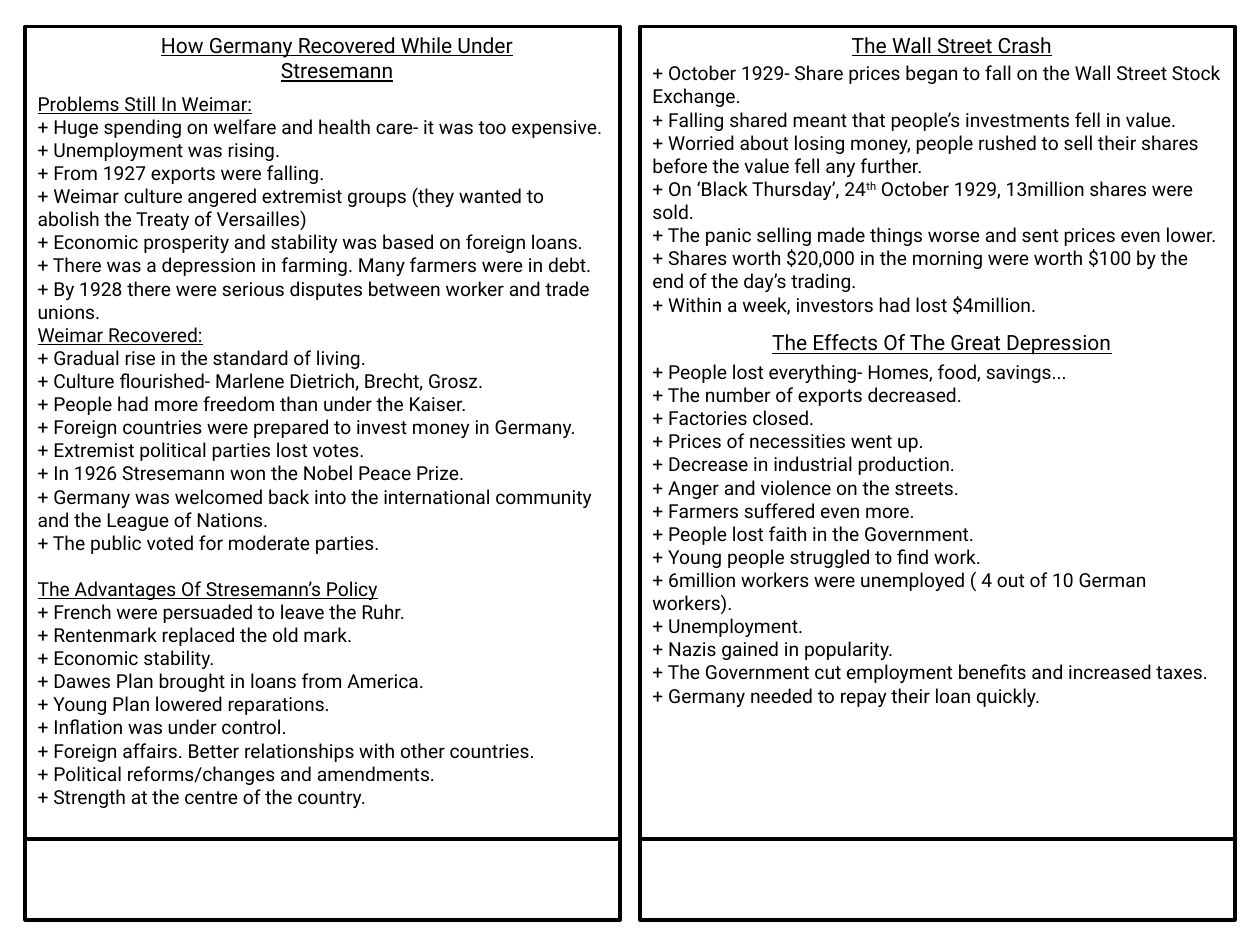
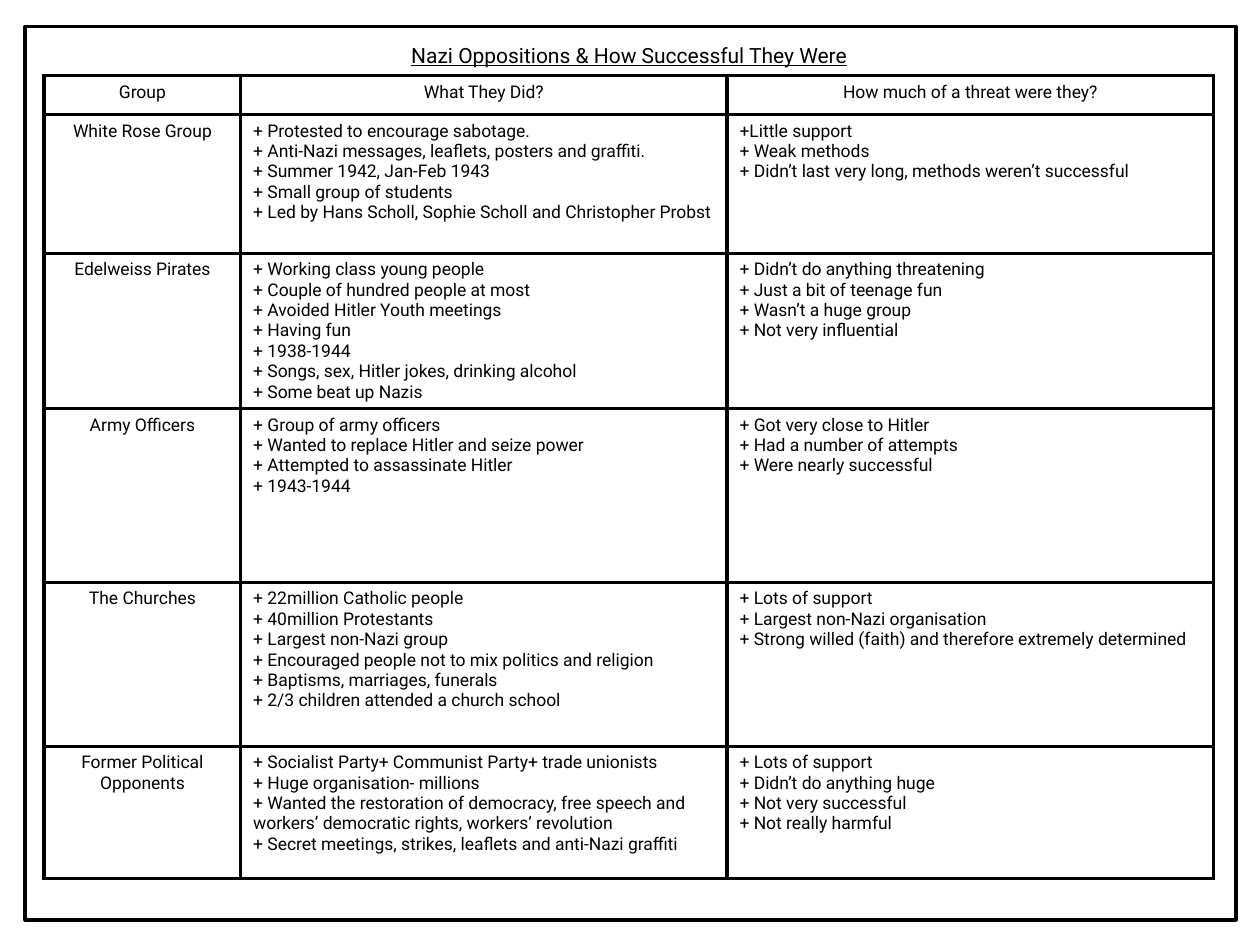
from dataclasses import dataclass

from lxml import etree
from pptx import Presentation
from pptx.dml.color import RGBColor
from pptx.enum.shapes import MSO_CONNECTOR, MSO_SHAPE
from pptx.enum.text import MSO_ANCHOR, MSO_AUTO_SIZE, PP_ALIGN
from pptx.oxml.ns import qn
from pptx.util import Inches, Pt

RECT = MSO_SHAPE.RECTANGLE
LINE = MSO_CONNECTOR.STRAIGHT
TOP = MSO_ANCHOR.TOP
GROW = MSO_AUTO_SIZE.SHAPE_TO_FIT_TEXT
LEFT, MID = PP_ALIGN.LEFT, PP_ALIGN.CENTER


@dataclass(frozen=True)
class Theme:
    font: str = "Roboto"
    ink: RGBColor = RGBColor(0, 0, 0)
    paper: RGBColor = RGBColor(255, 255, 255)
    head: int = 12
    body: int = 11
    cell: int = 10
    gap: int = 13
    frame: float = 2
    rule: float = 2.25


# Page grid, in inches
EDGE, TOP_Y, HIGH = 0.2, 0.21, 7.09
CARD, STEP, FOOT = 4.72, 4.88, 6.66
HEAD_W = 3.07

# Wording: "#" marks a subheading, "##" one with a gap above,
# and "^" encloses superscript text
WEIMAR = [
    "#Problems Still In Weimar:",
    "+ Huge spending on welfare and health care- it was too expensive.",
    "+ Unemployment was rising.",
    "+ From 1927 exports were falling.",
    "+ Weimar culture angered extremist groups (they wanted to abolish the Treaty of Versailles)",
    "+ Economic prosperity and stability was based on foreign loans.",
    "+ There was a depression in farming. Many farmers were in debt.",
    "+ By 1928 there were serious disputes between worker and trade unions.",
    "#Weimar Recovered:",
    "+ Gradual rise in the standard of living.",
    "+ Culture flourished- Marlene Dietrich, Brecht, Grosz.",
    "+ People had more freedom than under the Kaiser.",
    "+ Foreign countries were prepared to invest money in Germany.",
    "+ Extremist political parties lost votes.",
    "+ In 1926 Stresemann won the Nobel Peace Prize.",
    "+ Germany was welcomed back into the international community and the League of Nations.",
    "+ The public voted for moderate parties.",
    "##The Advantages Of Stresemann’s Policy",
    "+ French were persuaded to leave the Ruhr.",
    "+ Rentenmark replaced the old mark.",
    "+ Economic stability.",
    "+ Dawes Plan brought in loans from America.",
    "+ Young Plan lowered reparations.",
    "+ Inflation was under control.",
    "+ Foreign affairs. Better relationships with other countries.",
    "+ Political reforms/changes and amendments.",
    "+ Strength at the centre of the country.",
]
CRASH = [
    "+ October 1929- Share prices began to fall on the Wall Street Stock Exchange.",
    "+ Falling shared meant that people’s investments fell in value.",
    "+ Worried about losing money, people rushed to sell their shares before the value fell any further.",
    "+ On ‘Black Thursday’, 24^th^ October 1929, 13million shares were sold.",
    "+ The panic selling made things worse and sent prices even lower.",
    "+ Shares worth $20,000 in the morning were worth $100 by the end of the day’s trading.",
    "+ Within a week, investors had lost $4million.",
]
SLUMP = [
    "+ People lost everything- Homes, food, savings...",
    "+ The number of exports decreased.",
    "+ Factories closed.",
    "+ Prices of necessities went up.",
    "+ Decrease in industrial production.",
    "+ Anger and violence on the streets.",
    "+ Farmers suffered even more.",
    "+ People lost faith in the Government.",
    "+ Young people struggled to find work.",
    "+ 6million workers were unemployed ( 4 out of 10 German workers).",
    "+ Unemployment.",
    "+ Nazis gained in popularity.",
    "+ The Government cut employment benefits and increased taxes.",
    "+ Germany needed to repay their loan quickly.",
]
GROUPS = [
    (["Group"], ["What They Did?"], ["How much of a threat were they?"]),
    (["White Rose Group"],
     ["+ Protested to encourage sabotage.",
      "+ Anti-Nazi messages, leaflets, posters and graffiti.",
      "+ Summer 1942, Jan-Feb 1943",
      "+ Small group of students",
      "+ Led by Hans Scholl, Sophie Scholl and Christopher Probst"],
     ["+Little support",
      "+ Weak methods",
      "+ Didn’t last very long, methods weren’t successful"]),
    (["Edelweiss Pirates"],
     ["+ Working class young people",
      "+ Couple of hundred people at most",
      "+ Avoided Hitler Youth meetings",
      "+ Having fun",
      "+ 1938-1944",
      "+ Songs, sex, Hitler jokes, drinking alcohol",
      "+ Some beat up Nazis"],
     ["+ Didn’t do anything threatening",
      "+ Just a bit of teenage fun",
      "+ Wasn’t a huge group",
      "+ Not very influential"]),
    (["Army Officers"],
     ["+ Group of army officers",
      "+ Wanted to replace Hitler and seize power",
      "+ Attempted to assassinate Hitler",
      "+ 1943-1944"],
     ["+ Got very close to Hitler",
      "+ Had a number of attempts",
      "+ Were nearly successful"]),
    (["The Churches"],
     ["+ 22million Catholic people",
      "+ 40million Protestants",
      "+ Largest non-Nazi group",
      "+ Encouraged people not to mix politics and religion",
      "+ Baptisms, marriages, funerals",
      "+ 2/3 children attended a church school"],
     ["+ Lots of support",
      "+ Largest non-Nazi organisation",
      "+ Strong willed (faith) and therefore extremely determined"]),
    (["Former Political Opponents"],
     ["+ Socialist Party+ Communist Party+ trade unionists",
      "+ Huge organisation- millions",
      "+ Wanted the restoration of democracy, free speech and workers’ democratic rights, workers’ revolution",
      "+ Secret meetings, strikes, leaflets and anti-Nazi graffiti"],
     ["+ Lots of support",
      "+ Didn’t do anything huge",
      "+ Not very successful",
      "+ Not really harmful"]),
]
COLS = [1.56, 3.86, 3.86]
ROWS = [0.31, 1.1, 1.18, 1.38, 1.3, 1.05]


class Deck:
    def __init__(self, theme):
        self.theme = theme
        self.prs = Presentation()
        self.prs.slide_width, self.prs.slide_height = Inches(10), Inches(7.5)
        self.slide = None

    def page(self):
        self.slide = self.prs.slides.add_slide(self.prs.slide_layouts[5])

    def fill(self, frame, lines, size, align=LEFT):
        """Write the lines into a text frame, one paragraph each."""
        for i, line in enumerate(lines):
            para = frame.paragraphs[0] if i == 0 else frame.add_paragraph()
            para.alignment = align
            if line.startswith("##"):
                para.space_before = Pt(self.theme.gap)
            for j, part in enumerate(line.lstrip("#").split("^")):
                run = para.add_run()
                run.text = part
                font = run.font
                font.name, font.size = self.theme.font, Pt(size)
                font.color.rgb = self.theme.ink
                font.underline = line.startswith("#")
                if j % 2:
                    font._element.set("baseline", "30000")

    def fit(self, frame):
        frame.word_wrap = True
        frame.auto_size = GROW
        frame.vertical_anchor = TOP

    def title(self, text, x, y, w, h):
        shape = self.slide.shapes.title
        shape.left, shape.top = Inches(x), Inches(y)
        shape.width, shape.height = Inches(w), Inches(h)
        self.fit(shape.text_frame)
        self.fill(shape.text_frame, ["#" + text], self.theme.head, MID)
        # Bring the title in front of the panels
        shape._element.getparent().append(shape._element)

    def text(self, lines, x, y, w, h, size=None, align=LEFT):
        box = self.slide.shapes.add_textbox(
            Inches(x), Inches(y), Inches(w), Inches(h))
        self.fit(box.text_frame)
        self.fill(box.text_frame, lines, size or self.theme.body, align)

    def head(self, text, x, y):
        self.text(["#" + text], x, y, HEAD_W, 0.3, self.theme.head, MID)

    def panel(self, x, w):
        box = self.slide.shapes.add_shape(
            RECT, Inches(x), Inches(TOP_Y), Inches(w), Inches(HIGH))
        box.shadow.inherit = False
        box.fill.solid()
        box.fill.fore_color.rgb = self.theme.paper
        box.line.color.rgb = self.theme.ink
        box.line.width = Pt(self.theme.frame)

    def rule(self, x, y, w):
        line = self.slide.shapes.add_connector(
            LINE, Inches(x), Inches(y), Inches(x + w), Inches(y))
        line.line.color.rgb = self.theme.ink
        line.line.width = Pt(self.theme.rule)
        etree.SubElement(line._element.spPr, qn("a:effectLst"))

    def border(self, cell):
        props = cell._tc.get_or_add_tcPr()
        for side in ("a:lnL", "a:lnR", "a:lnT", "a:lnB"):
            edge = etree.SubElement(
                props, qn(side), w=str(Pt(self.theme.rule)))
            paint = etree.SubElement(edge, qn("a:solidFill"))
            etree.SubElement(
                paint, qn("a:srgbClr"), val=str(self.theme.ink))

    def table(self, data, x, y, cols, rows):
        grid = self.slide.shapes.add_table(
            len(rows), len(cols), Inches(x), Inches(y),
            Inches(sum(cols)), Inches(sum(rows))).table
        grid.first_row = grid.horz_banding = False
        for col, w in zip(grid.columns, cols):
            col.width = Inches(w)
        for row, h in zip(grid.rows, rows):
            row.height = Inches(h)
        for r, row in enumerate(data):
            for c, lines in enumerate(row):
                cell = grid.cell(r, c)
                align = MID if r == 0 or c == 0 else LEFT
                self.fill(cell.text_frame, lines, self.theme.cell, align)
                self.border(cell)
                cell.fill.background()


def main():
    deck = Deck(Theme())

    # Slide 1: two revision cards, each with a foot strip
    deck.page()
    right = EDGE + STEP
    for x in (EDGE, right):
        deck.panel(x, CARD)
        deck.rule(x, FOOT, CARD)
    deck.text(WEIMAR, EDGE, 0.68, CARD, 6.02)
    deck.title("How Germany Recovered While Under Stresemann",
               EDGE + 0.94, TOP_Y, HEAD_W, 0.5)
    deck.text(CRASH, right, 0.44, CARD, 2.14)
    deck.head("The Wall Street Crash", right + 0.94, TOP_Y)
    deck.head("The Effects Of The Great Depression", right + 0.86, 2.57)
    deck.text(SLUMP, right, 2.81, CARD, 3.06)

    # Slide 2: opposition table
    deck.page()
    deck.panel(EDGE, 9.61)
    deck.table(GROUPS, 0.35, 0.6, COLS, ROWS)
    deck.title("Nazi Oppositions & How Successful They Were",
               0.98, 0.29, 8.03, 0.3)

    deck.prs.save("out.pptx")


if __name__ == "__main__":
    main()
